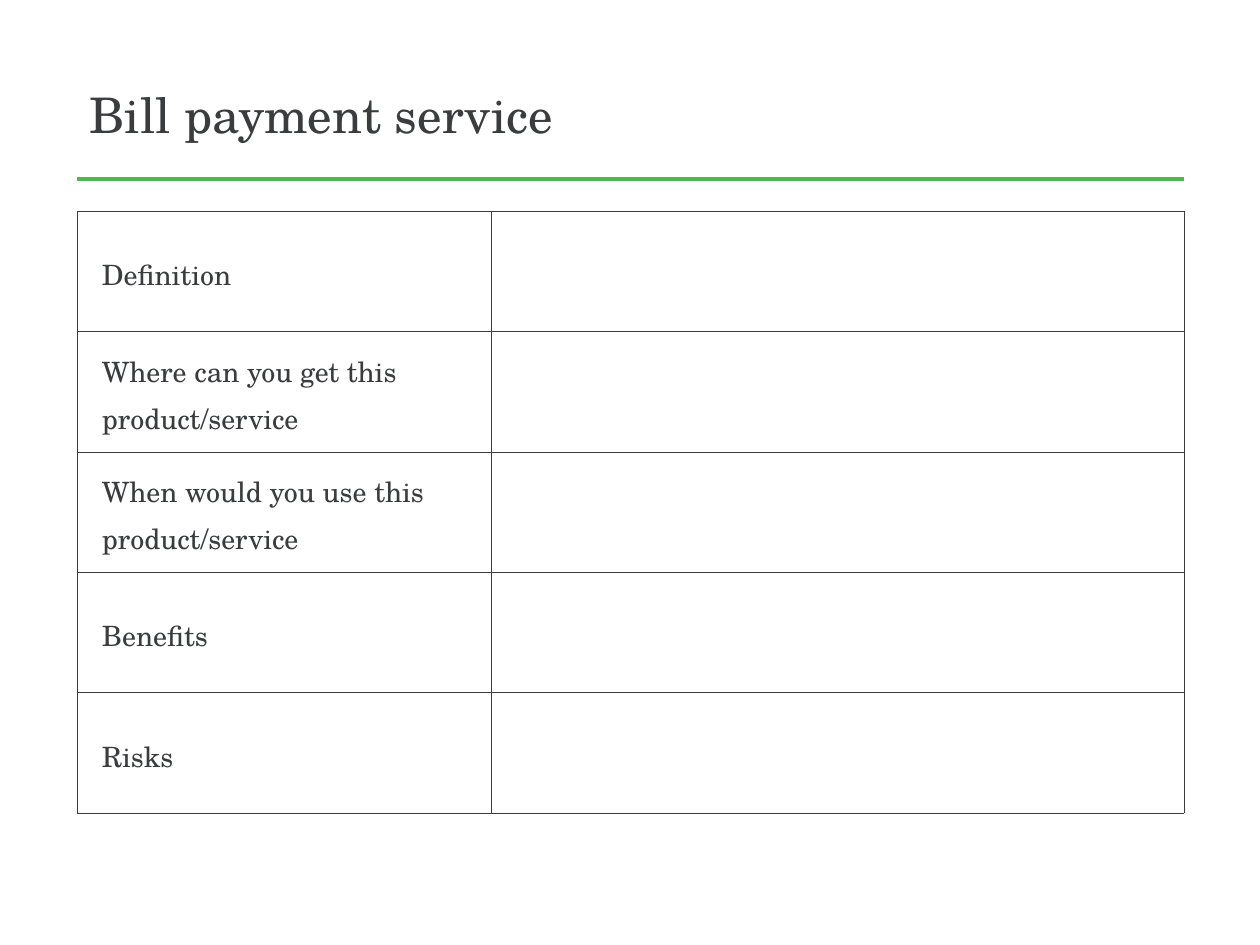
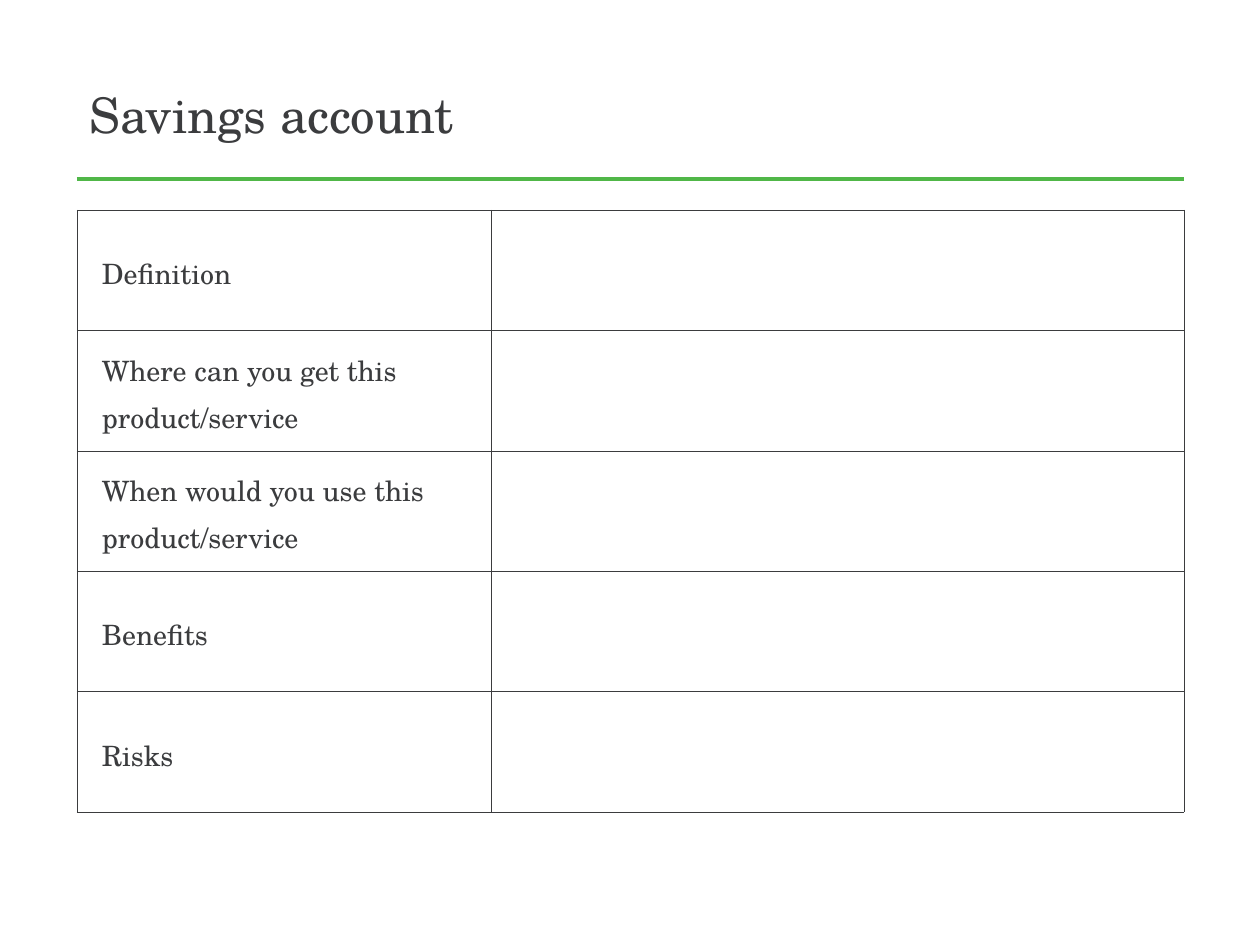
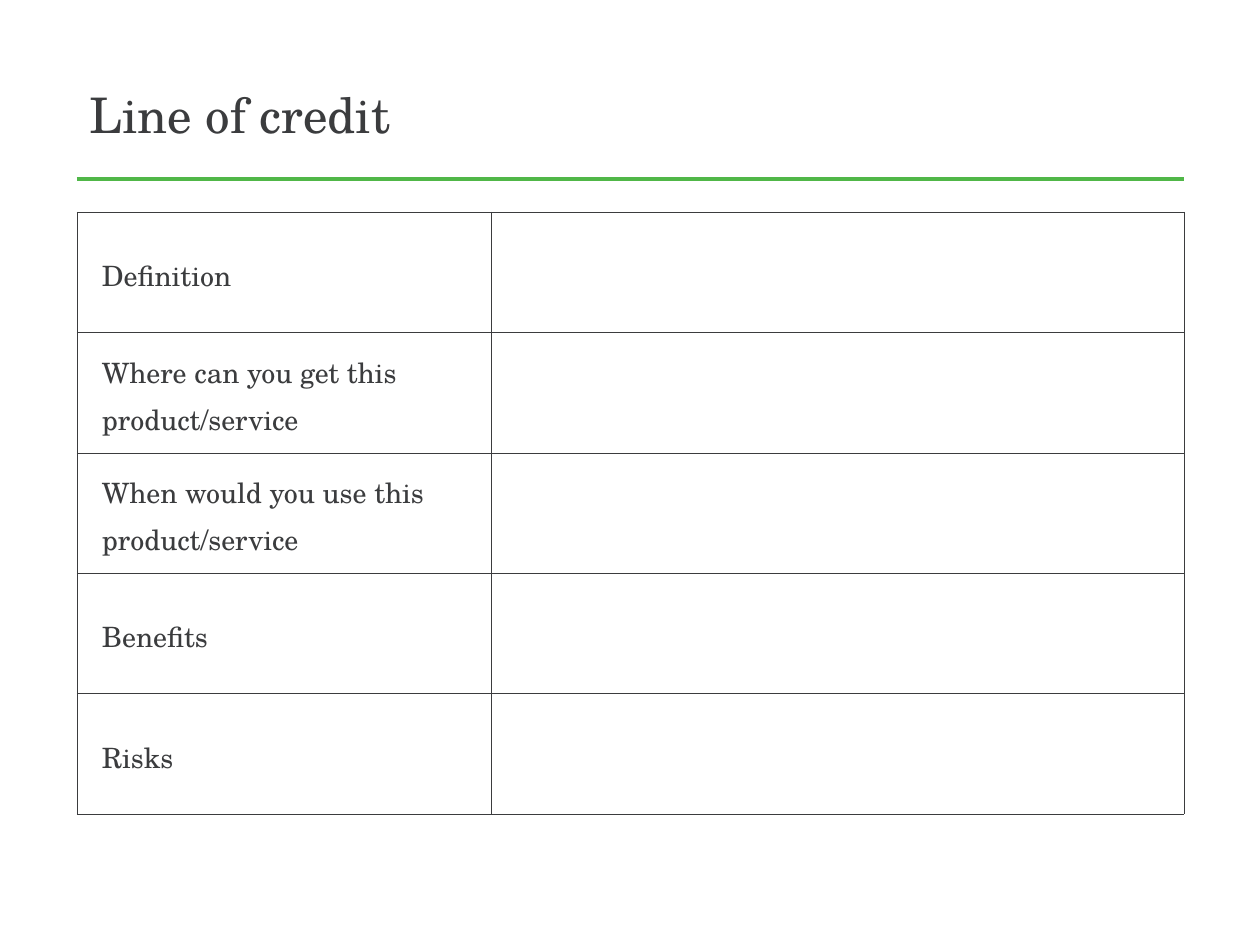
from pptx import Presentation
from pptx import util as u
from pptx.dml.color import RGBColor
from pptx.enum import shapes, text
from pptx.oxml import ns
from lxml import etree

PX = u.Inches(1) / 126
FONT = "TeX Gyre Schola"
COLOURS = {"ink": "3B3C3E", "rule": "50B748"}

LEFT, WIDTH = 77, 1107
TITLE_BOX = (LEFT, 63, WIDTH, 102)
RULE_Y = 179
LABEL_WIDTH = 414
TABLE_HEIGHT = 602

QUESTIONS = [
    "Definition",
    "Where can you get this product/service",
    "When would you use this product/service",
    "Benefits",
    "Risks",
]
# Product name and top of its table
PRODUCTS = [("Bill payment service", 211), ("Savings account", 210), ("Line of credit", 212)]


def px(n):
    return u.Emu(round(n * PX))


def colour(name):
    return RGBColor.from_string(COLOURS[name])


def style_text(p, size):
    p.alignment = text.PP_ALIGN.LEFT
    p.font.name = FONT
    p.font.size = u.Pt(size)
    p.font.color.rgb = colour("ink")


def prepare_layout(layout):
    title = layout.placeholders[0]
    title.left, title.top, title.width, title.height = map(px, TITLE_BOX)


def add_rule(s, layout):
    """Draw the line under the title and move it to the shared layout."""
    rule = s.shapes.add_connector(
        shapes.MSO_CONNECTOR.STRAIGHT, px(LEFT), px(RULE_Y), px(LEFT + WIDTH), px(RULE_Y))
    rule.line.color.rgb = colour("rule")
    rule.line.width = u.Pt(2)
    etree.SubElement(rule.element.spPr, ns.qn("a:effectLst"))
    layout.shapes.element.append(rule.element)


def add_title(s, words):
    tf = s.shapes.title.text_frame
    tf.text = words
    tf.auto_size = text.MSO_AUTO_SIZE.NONE
    tf.vertical_anchor = text.MSO_ANCHOR.MIDDLE
    style_text(tf.paragraphs[0], 28)


def format_cell(cell):
    """Clear the fill and draw a hairline on all four sides."""
    cell.fill.background()
    tc_pr = cell._tc.get_or_add_tcPr()
    for i, side in enumerate(("lnL", "lnR", "lnT", "lnB")):
        ln = etree.Element(ns.qn(f"a:{side}"), w=str(u.Pt(0.25)))
        fill = etree.SubElement(ln, ns.qn("a:solidFill"))
        etree.SubElement(fill, ns.qn("a:srgbClr"), val=COLOURS["ink"])
        tc_pr.insert(i, ln)


def add_worksheet(s, left, top, width, height):
    """Add the table of questions with an empty answer column."""
    frame = s.shapes.add_table(len(QUESTIONS), 2, px(left), px(top), px(width), px(height))
    table = frame.table
    table.first_row = table.horz_banding = False
    table.columns[0].width = px(LABEL_WIDTH)
    table.columns[1].width = px(width - LABEL_WIDTH)
    for row, question in zip(table.rows, QUESTIONS):
        row.height = px(height / len(QUESTIONS))
        label = row.cells[0]
        label.text = question
        label.margin_left = px(25)
        label.vertical_anchor = text.MSO_ANCHOR.MIDDLE
        p = label.text_frame.paragraphs[0]
        p.line_spacing = 1.15
        style_text(p, 16)
        for cell in row.cells:
            format_cell(cell)


def main():
    prs = Presentation()
    prs.slide_width, prs.slide_height = px(1260), px(945)
    layout = prs.slide_layouts.get_by_name("Title Only")
    prepare_layout(layout)
    for i, (product, table_top) in enumerate(PRODUCTS):
        s = prs.slides.add_slide(layout)
        if i == 0:
            add_rule(s, layout)
        add_title(s, product)
        add_worksheet(s, LEFT, table_top, WIDTH, TABLE_HEIGHT)
    prs.save("out.pptx")


if __name__ == "__main__":
    main()
